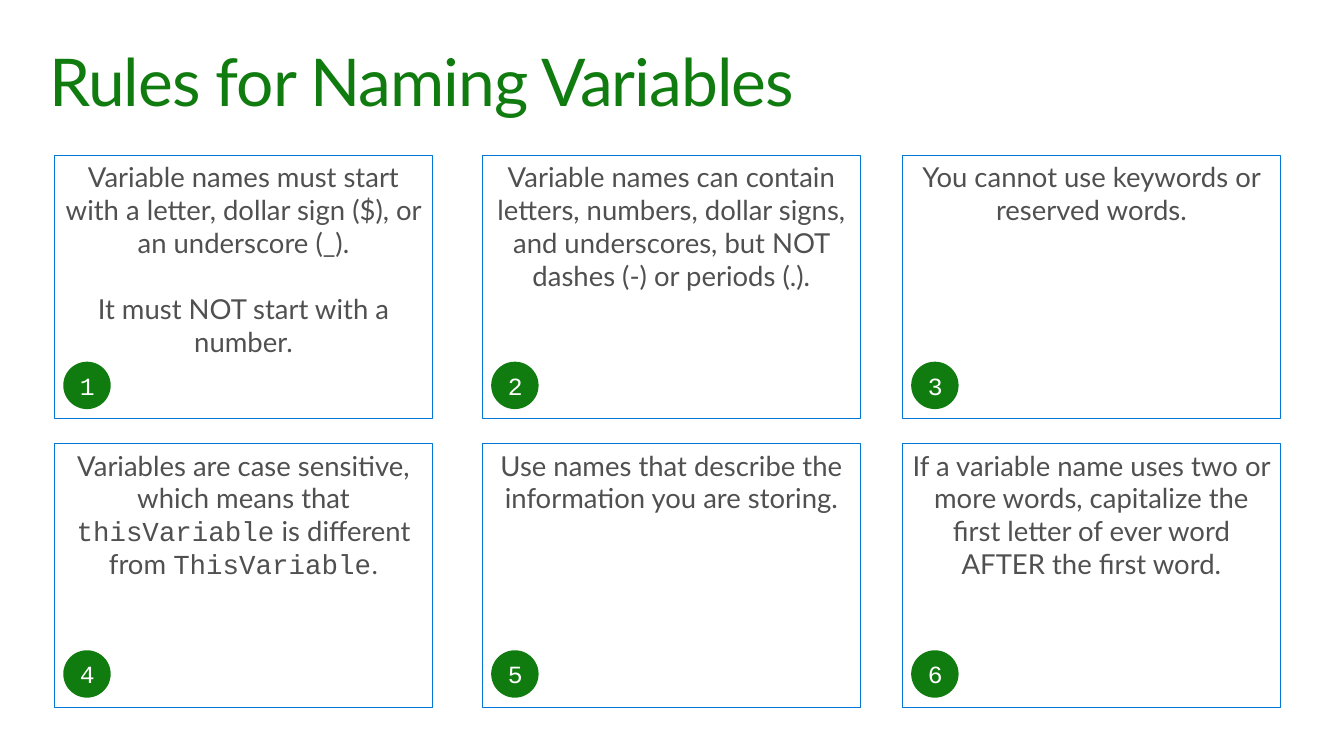
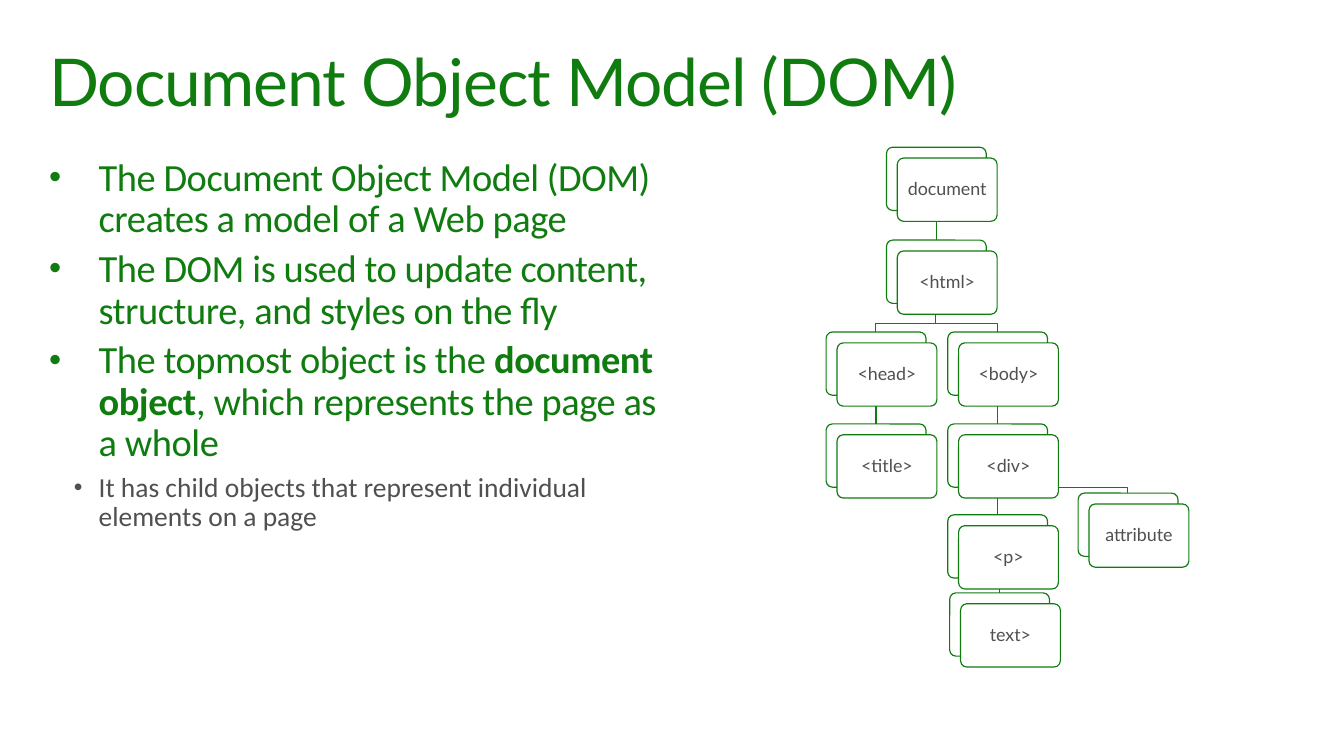
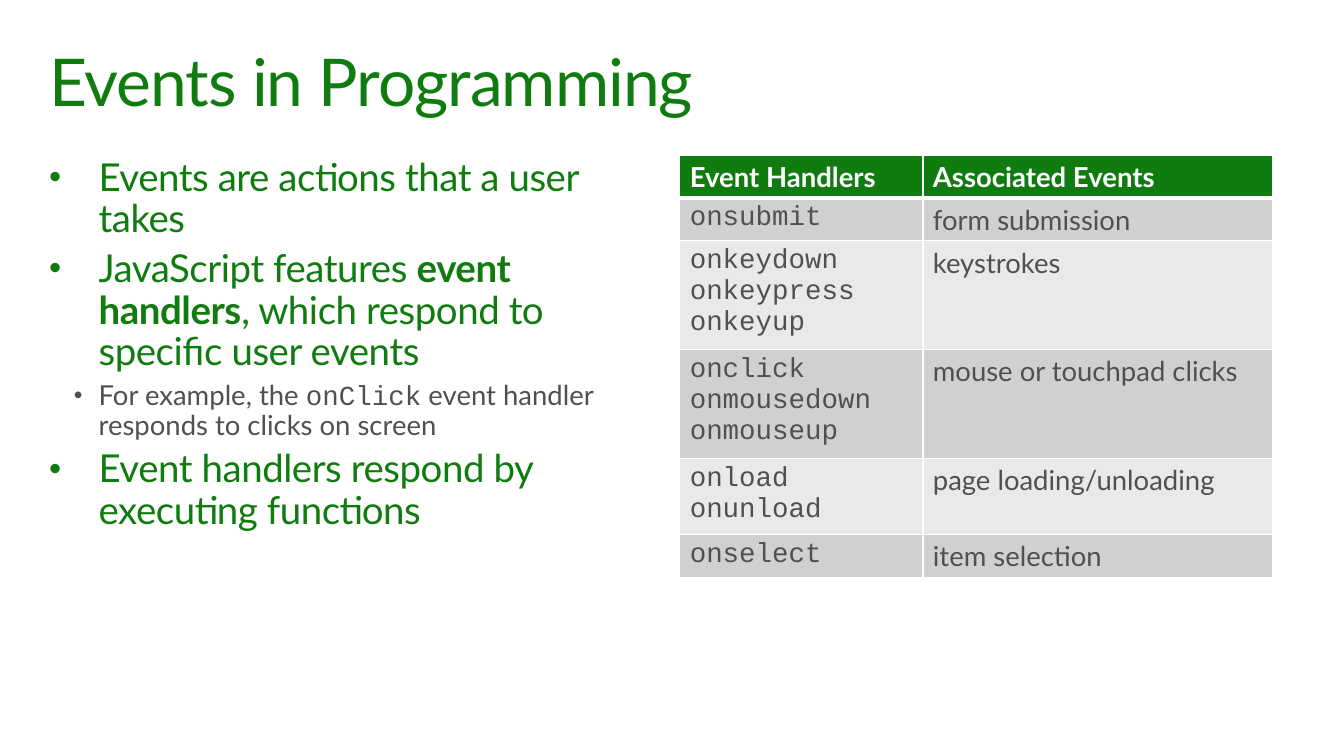
from lxml.etree import SubElement
from pptx import Presentation
from pptx.dml.color import RGBColor as RGB
from pptx.enum.shapes import MSO_CONNECTOR as LINK, MSO_SHAPE as FORM
from pptx.enum.text import MSO_ANCHOR as ANCHOR, PP_ALIGN as ALIGN
from pptx.oxml.ns import qn
from pptx.util import Emu, Pt

PX = 9144  # 100 px to the inch
HUES = {"green": "107C10", "blue": "0377D6", "gray": "505050",
        "white": "FFFFFF", "dark": "D0D0D0", "light": "E9E9E9"}
SANS, MONO, ALT = "Lato", "Courier New", "Calibri"
CODE, BOLD = {"font": MONO}, {"bold": True}

# A text is a string or a list of runs; a run is a string or (string, format).
RULES = [
    ["Variable names must start with a letter, dollar sign ($), "
     "or an underscore (_).",
     "It must NOT start with a number."],
    ["Variable names can contain letters, numbers, dollar signs, "
     "and underscores, but NOT dashes (-) or periods (.)."],
    ["You cannot use keywords or reserved words."],
    [["Variables are case sensitive, which means that ",
      ("thisVariable", CODE), " is different from ",
      ("ThisVariable", CODE), (".", {"font": ALT})]],
    ["Use names that describe the information you are storing."],
    ["If a variable name uses two or more words, capitalize the first "
     "letter of ever word AFTER the first word."],
]
RULE_COLS, RULE_ROWS = (55, 488, 913), (157, 449)
RULE_W, RULE_H, BADGE = 383, 267, 48

MODEL = [  # (level, text)
    (1, "The Document Object Model (DOM) creates a model of a Web page"),
    (1, "The DOM is used to update content, structure, and styles "
        "on the fly"),
    (1, ["The topmost object is the ", ("document object", BOLD),
         ", which represents the page as a whole"]),
    (2, "It has child objects that represent individual elements "
        "on a page"),
]
NODES = {  # label: (left, top, parent)
    "document": (897, 149, None),
    "<html>": (897, 243, "document"),
    "<head>": (836, 336, "<html>"),
    "<title>": (836, 429, "<head>"),
    "<body>": (959, 336, "<html>"),
    "<div>": (959, 429, "<body>"),
    "attribute": (1091, 499, "<div>"),
    "<p>": (959, 521, "<div>"),
    "text>": (961, 600, "<p>"),
}
NODE_W, NODE_H, SHIFT, DROP = 101, 64, 11, 9

EVENTS = [
    (1, "Events are actions that a user takes"),
    (1, ["JavaScript features ", ("event handlers", BOLD),
         ", which respond to specific user events"]),
    (2, ["For example, the ", ("onClick", CODE),
         " event handler responds to clicks on screen"]),
    (1, "Event handlers respond by executing functions"),
]
HEADS = ("Event Handlers", "Associated Events")
HANDLERS = [
    (["onsubmit"], "form submission"),
    (["onkeydown", "onkeypress", "onkeyup"], "keystrokes"),
    (["onclick", "onmousedown", "onmouseup"], "mouse or touchpad clicks"),
    (["onload", "onunload"], "page loading/unloading"),
    (["onselect"], "item selection"),
]
TABLE_COLS = (246, 354)

LEVELS = {1: dict(size=28, color="green", track=-30, hang=50),
          2: dict(size=20, color="gray", hang=25)}


def hue(name):
    return RGB.from_string(HUES[name])


def px(*nums):
    return [Emu(n * PX) for n in nums]


def write(frame, text, font=SANS, size=20, color="gray", bold=False,
          align=ALIGN.LEFT, before=0, lines=None, track=0, hang=0):
    """Add one paragraph to the frame; hang makes it a bullet."""
    first = not frame.text
    para = frame.paragraphs[0] if first else frame.add_paragraph()
    if hang:
        props = para._p.get_or_add_pPr()
        props.set("marL", str(50 * PX))
        props.set("indent", str(-hang * PX))
        SubElement(props, qn("a:buSzPct"), val="90000")
        SubElement(props, qn("a:buFont"), typeface="Arial")
        SubElement(props, qn("a:buChar"), char="•")
    para.alignment = align
    para.space_before = Pt(0 if first else before)
    if lines:
        para.line_spacing = lines
    for part in [text] if isinstance(text, str) else text:
        words, own = (part, {}) if isinstance(part, str) else part
        run = para.add_run()
        run.text = words
        run.font.name = own.get("font", font)
        run.font.size = Pt(size)
        run.font.bold = own.get("bold", bold)
        run.font.color.rgb = hue(color)
        if track:
            run._r.get_or_add_rPr().set("spc", str(track))


def pad(frame, inset):
    frame.word_wrap = True
    frame.margin_left = frame.margin_right = Emu(inset * PX)
    frame.margin_top = frame.margin_bottom = Emu(inset * PX)


def paint(shape, fill=None, line=None, width=0.85):
    shape.shadow.inherit = False
    if fill:
        shape.fill.solid()
        shape.fill.fore_color.rgb = hue(fill)
    else:
        shape.fill.background()
    if line:
        shape.line.color.rgb = hue(line)
        shape.line.width = Pt(width)
    else:
        shape.line.fill.background()


def text_box(slide, *at):
    frame = slide.shapes.add_textbox(*px(*at)).text_frame
    pad(frame, 10)
    return frame


def start(deck, title):
    slide = deck.slides.add_slide(deck.slide_layouts[6])
    write(text_box(slide, 40, 40, 1280, 100), title, size=48,
          color="green", lines=0.9, track=-70)
    return slide


def bullets(slide, items):
    frame = text_box(slide, 40, 150, 640, 403)
    return [write(frame, text, before=6, lines=0.9, **LEVELS[level])
            for level, text in items] and frame


def rule_card(slide, num, paras):
    row, col = divmod(num - 1, len(RULE_COLS))
    left, top = RULE_COLS[col], RULE_ROWS[row]
    card = slide.shapes.add_shape(FORM.RECTANGLE,
                                  *px(left, top, RULE_W, RULE_H))
    paint(card, line="blue", width=0.75)
    card.text_frame.word_wrap = True
    card.text_frame.vertical_anchor = ANCHOR.TOP
    for para in paras:
        write(card.text_frame, para, align=ALIGN.CENTER, before=24)
    badge = slide.shapes.add_shape(FORM.OVAL,
                                   *px(left + 9, top + 209, BADGE, BADGE))
    paint(badge, fill="green")
    badge.text_frame.vertical_anchor = ANCHOR.MIDDLE
    write(badge.text_frame, str(num), font=MONO, size=18, color="white",
          align=ALIGN.CENTER)


def node_card(slide, left, top):
    card = slide.shapes.add_shape(FORM.ROUNDED_RECTANGLE,
                                  *px(left, top, NODE_W, NODE_H))
    card.adjustments[0] = 0.1
    paint(card, fill="white", line="green")
    return card


def branch(slide, cards, name):
    """Link a node to its parent, straight or with two bends."""
    left, top, parent = NODES[name]
    above, high, _ = NODES[parent]
    if left == above:
        link = slide.shapes.add_connector(LINK.STRAIGHT, 0, 0, 0, 0)
        link.begin_connect(cards[parent], 2)
        link.end_connect(cards[name], 0)
        link.line.color.rgb = hue("green")
        link.line.width = Pt(0.85)
        SubElement(link._element.spPr, qn("a:effectLst"))
        return
    half, base = NODE_W // 2, high + NODE_H
    bend = max(base, top - DROP)
    path = slide.shapes.build_freeform(above + half, base, scale=PX)
    path.add_line_segments([(above + half, bend), (left + half, bend),
                            (left + half, top)], close=False)
    paint(path.convert_to_shape(), line="green")


def tree(slide):
    cards = {name: node_card(slide, left, top)
             for name, (left, top, _) in NODES.items()}
    for name, (_, _, parent) in NODES.items():
        if parent:
            branch(slide, cards, name)
    for name, (left, top, _) in NODES.items():
        frame = node_card(slide, left + SHIFT, top + SHIFT).text_frame
        pad(frame, 5)
        frame.vertical_anchor = ANCHOR.MIDDLE
        write(frame, name, size=13, align=ALIGN.CENTER, lines=0.9)


def fill_cell(cell, paras, fill, top=1, base=1, **fmt):
    props = cell._tc.get_or_add_tcPr()
    for side, wide in zip("LRTB", (1, 1, top, base)):
        edge = SubElement(props, qn(f"a:ln{side}"), w=str(Pt(wide)))
        solid = SubElement(edge, qn("a:solidFill"))
        SubElement(solid, qn("a:srgbClr"), val=HUES["white"])
    cell.fill.solid()
    cell.fill.fore_color.rgb = hue(fill)
    for para in paras:
        write(cell.text_frame, para, **fmt)


def event_table(slide):
    highs = [43] + [31 * len(names) + 12 for names, _ in HANDLERS]
    grid = slide.shapes.add_table(
        len(highs), len(TABLE_COLS),
        *px(688, 157, sum(TABLE_COLS), sum(highs))).table
    grid.horz_banding = False
    for col, wide in zip(grid.columns, px(*TABLE_COLS)):
        col.width = wide
    for row, high in zip(grid.rows, px(*highs)):
        row.height = high
    for col, head in enumerate(HEADS):
        fill_cell(grid.cell(0, col), [head], "green", base=3,
                  color="white", bold=True)
    for row, (names, event) in enumerate(HANDLERS, 1):
        look = dict(fill="dark" if row % 2 else "light",
                    top=3 if row == 1 else 1)
        fill_cell(grid.cell(row, 0), names, font=MONO, **look)
        fill_cell(grid.cell(row, 1), [event], **look)


def main():
    deck = Presentation()
    deck.slide_width, deck.slide_height = px(1360, 765)

    slide = start(deck, "Rules for Naming Variables")
    for num, paras in enumerate(RULES, 1):
        rule_card(slide, num, paras)

    slide = start(deck, "Document Object Model (DOM)")
    frame = bullets(slide, MODEL)
    for para in frame.paragraphs:
        for run in para.runs:
            run.font.name = ALT
    tree(slide)

    slide = start(deck, "Events in Programming")
    bullets(slide, EVENTS)
    event_table(slide)

    deck.save("out.pptx")


if __name__ == "__main__":
    main()
